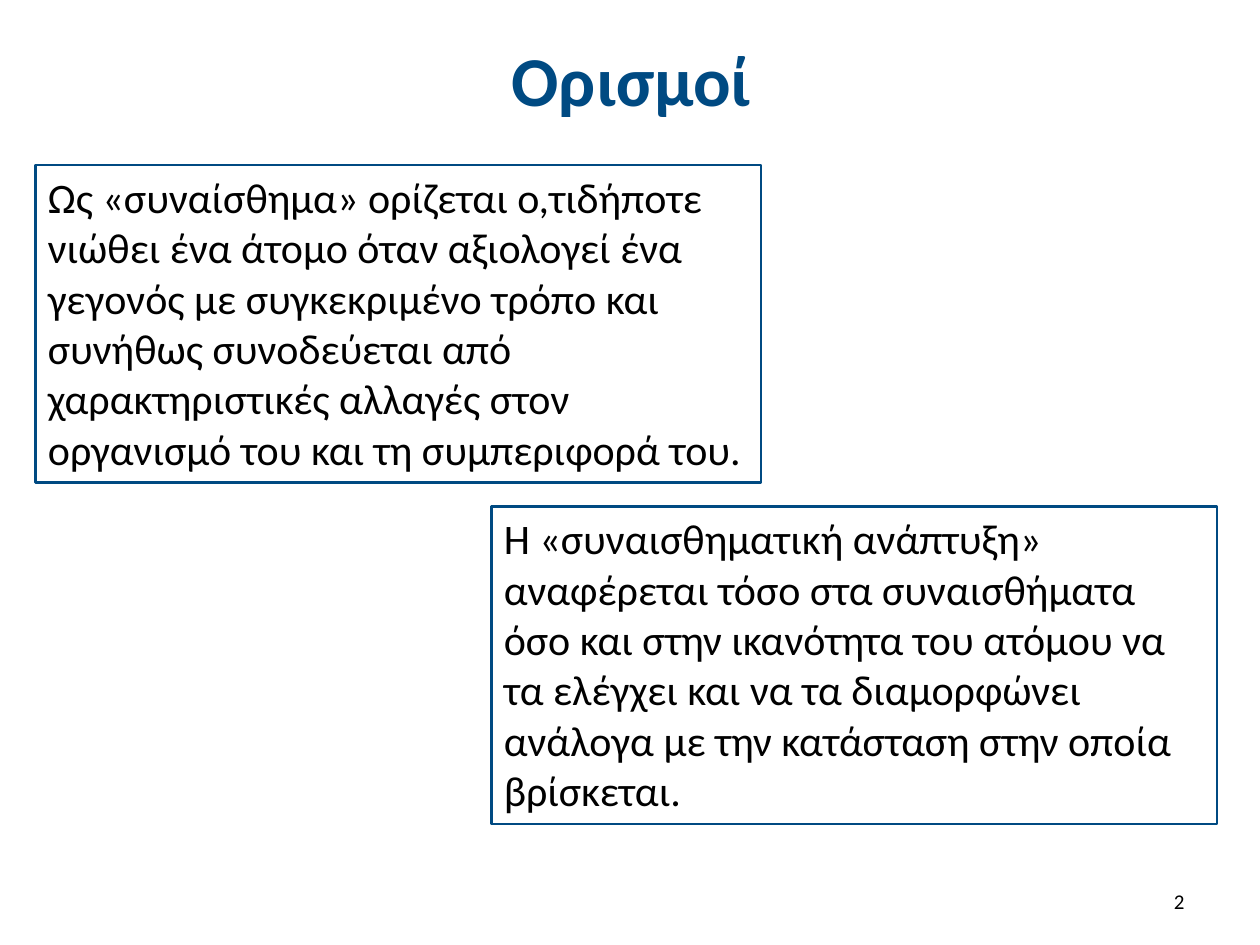
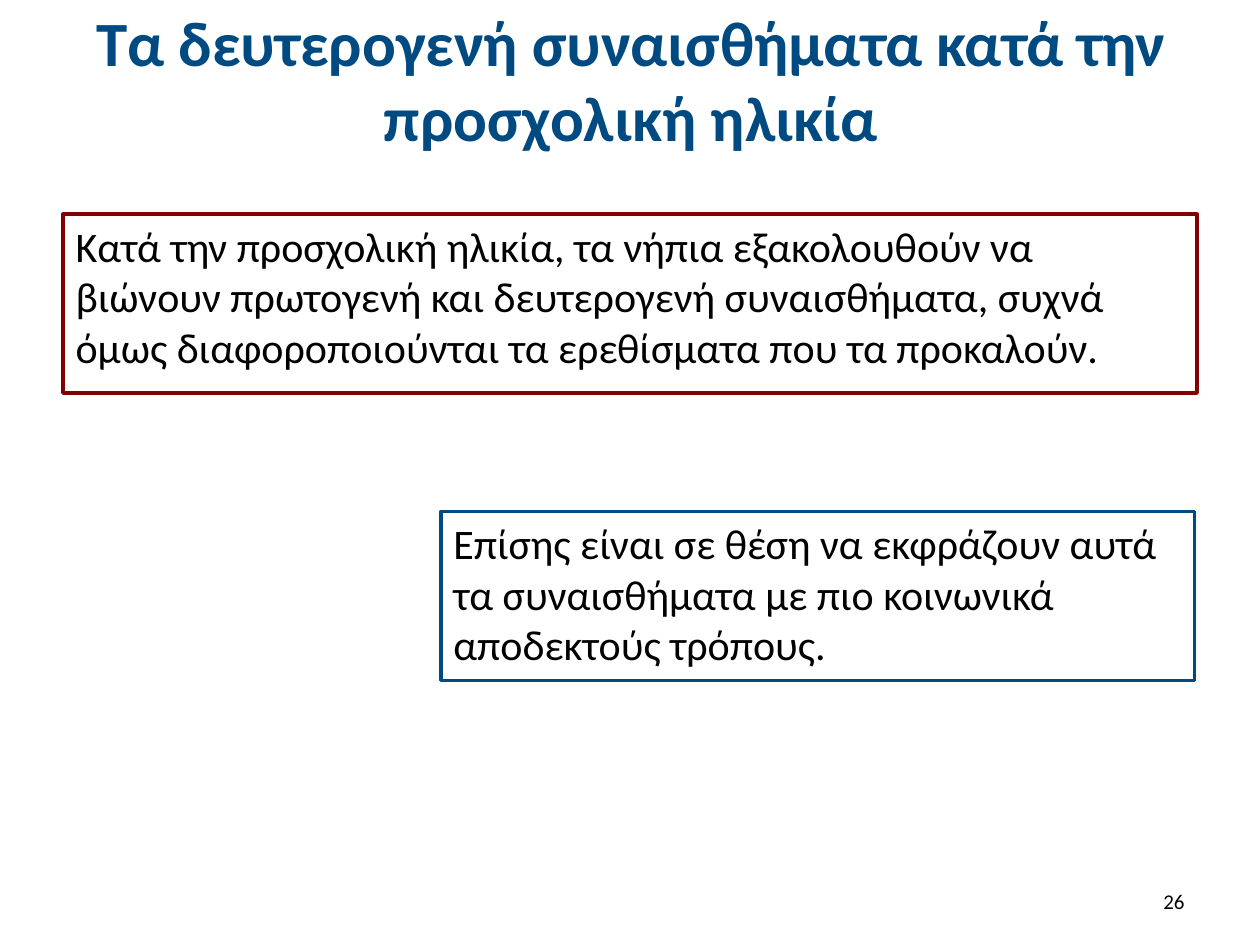
import pptx
import pptx.util
from pptx.dml.color import RGBColor
from pptx.enum.shapes import MSO_SHAPE
from pptx.enum.text import MSO_ANCHOR, MSO_AUTO_SIZE, PP_ALIGN
from pptx.oxml.xmlchemy import OxmlElement

FONT = "Calibri"
BLUE = RGBColor(0x00, 0x4A, 0x82)
RED = RGBColor(0x82, 0x00, 0x00)
BLACK = RGBColor(0x00, 0x00, 0x00)

# Slide size and the grid that all places are counted in
SLIDE_WIDTH = pptx.util.Inches(10)
SLIDE_HEIGHT = pptx.util.Inches(7.5)
COLUMN = SLIDE_WIDTH / 100
ROW = SLIDE_HEIGHT / 75

# Left, top, width, height in columns and rows
TITLE_AREA = (5.1, 1.3, 90, 9.9)
NUMBER_AREA = (71.7, 69.5, 23.3, 4)
TITLE_AND_CONTENT = 1


def grid(left, top, width, height):
    return (round(left * COLUMN), round(top * ROW),
            round(width * COLUMN), round(height * ROW))


def place(shape, area):
    shape.left, shape.top, shape.width, shape.height = grid(*area)


def write(shape, text, size, color=BLACK, bold=False,
          alignment=PP_ALIGN.LEFT, anchor=MSO_ANCHOR.TOP):
    frame = shape.text_frame
    frame.word_wrap = True
    frame.auto_size = MSO_AUTO_SIZE.NONE
    frame.vertical_anchor = anchor
    paragraph = frame.paragraphs[0]
    paragraph.alignment = alignment
    paragraph.space_before = pptx.util.Pt(0)
    run = paragraph.add_run()
    run.text = text
    run.font.name = FONT
    run.font.size = pptx.util.Pt(size)
    run.font.bold = bold
    run.font.color.rgb = color


def remove_bullet(paragraph):
    properties = paragraph._p.get_or_add_pPr()
    properties.set("marL", "0")
    properties.set("indent", "0")
    properties.append(OxmlElement("a:buNone"))


def outline(shape, color, width):
    shape.fill.background()
    shape.line.color.rgb = color
    shape.line.width = pptx.util.Pt(width)


def add_titled_slide(presentation, title, size, number):
    """Add a slide with the shared title style and page number."""
    layout = presentation.slide_layouts[TITLE_AND_CONTENT]
    slide = presentation.slides.add_slide(layout)
    place(slide.shapes.title, TITLE_AREA)
    write(slide.shapes.title, title, size, BLUE, True,
          PP_ALIGN.CENTER, MSO_ANCHOR.MIDDLE)
    number_box = slide.shapes.add_textbox(*grid(*NUMBER_AREA))
    write(number_box, str(number), 12, alignment=PP_ALIGN.RIGHT,
          anchor=MSO_ANCHOR.MIDDLE)
    return slide


def fill_body(slide, area, text, color, line_width):
    """Put the main statement in the framed body placeholder."""
    body = slide.placeholders[1]
    place(body, area)
    outline(body, color, line_width)
    remove_bullet(body.text_frame.paragraphs[0])
    write(body, text, 24)


def add_framed_box(slide, area, text, color, line_width):
    """Add a second framed statement."""
    box = slide.shapes.add_shape(MSO_SHAPE.RECTANGLE, *grid(*area))
    box.shadow.inherit = False
    outline(box, color, line_width)
    write(box, text, 24)


def main():
    presentation = pptx.Presentation()
    presentation.slide_width = SLIDE_WIDTH
    presentation.slide_height = SLIDE_HEIGHT

    # Definitions
    slide = add_titled_slide(presentation, "Ορισμοί", 40, 2)
    fill_body(
        slide, (2.8, 13.1, 57.6, 25.2),
        "Ως «συναίσθημα» ορίζεται ο,τιδήποτε νιώθει ένα άτομο όταν "
        "αξιολογεί ένα γεγονός με συγκεκριμένο τρόπο και συνήθως "
        "συνοδεύεται από χαρακτηριστικές αλλαγές στον οργανισμό του "
        "και τη συμπεριφορά του.", BLUE, 1.5)
    add_framed_box(
        slide, (39, 40.2, 57.6, 25.2),
        "Η «συναισθηματική ανάπτυξη» αναφέρεται τόσο στα συναισθήματα "
        "όσο και στην ικανότητα του ατόμου να τα ελέγχει και να τα "
        "διαμορφώνει ανάλογα με την κατάσταση στην οποία βρίσκεται.",
        BLUE, 1.5)

    # Secondary emotions at preschool age
    slide = add_titled_slide(
        presentation,
        "Τα δευτερογενή συναισθήματα κατά την προσχολική ηλικία", 36, 26)
    fill_body(
        slide, (5, 17, 90, 14.2),
        "Κατά την προσχολική ηλικία, τα νήπια εξακολουθούν να βιώνουν "
        "πρωτογενή και δευτερογενή συναισθήματα, συχνά όμως "
        "διαφοροποιούνται τα ερεθίσματα που τα προκαλούν.", RED, 2)
    add_framed_box(
        slide, (35, 40.6, 59.8, 13.4),
        "Επίσης είναι σε θέση να εκφράζουν αυτά τα συναισθήματα με πιο "
        "κοινωνικά αποδεκτούς τρόπους.", BLUE, 2)

    presentation.save("out.pptx")


if __name__ == "__main__":
    main()
